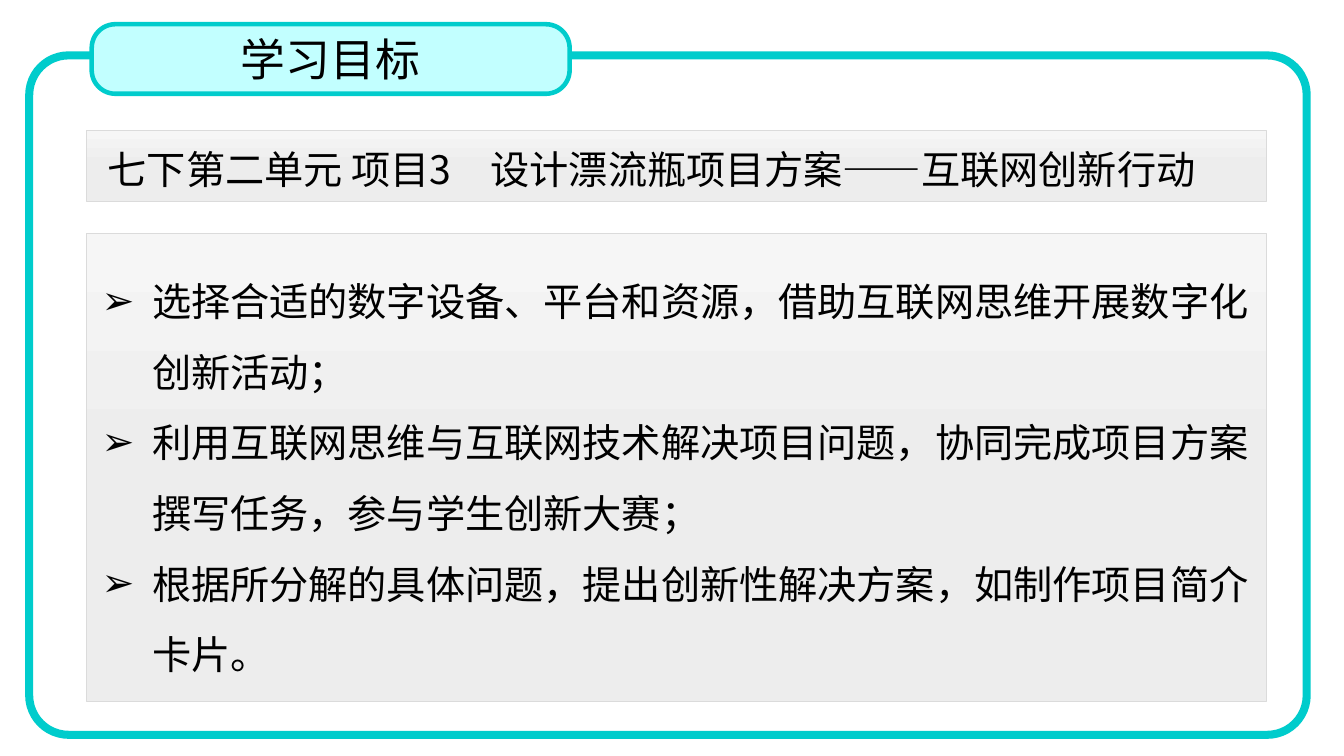
from copy import deepcopy

from pptx import Presentation
from pptx.dml.color import RGBColor
from pptx.enum.shapes import MSO_SHAPE as Shape
from pptx.enum.text import MSO_ANCHOR as Anchor, MSO_AUTO_SIZE as AutoSize, PP_ALIGN as Align
from pptx.oxml.ns import qn
from pptx.util import Inches, Pt
from lxml.etree import SubElement

COLORS = {
    "text": "000000",
    "frame": "00CCCC",
    "tab": "C2FFFF",
    "panel_line": "DBDBDB",
    "panel_top": "F6F6F6",
    "panel_middle": "EDEDED",
    "panel_bottom": "EBEBEB",
}

GOALS = [
    "选择合适的数字设备、平台和资源，借助互联网思维开展数字化创新活动；",
    "利用互联网思维与互联网技术解决项目问题，协同完成项目方案撰写任务，参与学生创新大赛；",
    "根据所分解的具体问题，提出创新性解决方案，如制作项目简介卡片。",
]


class GoalSlide:
    title_font = "Arial"
    body_font = "Noto Sans CJK SC"
    title_size = Pt(32)
    body_size = Pt(28)
    line_spacing = 1.5

    def __init__(self, slide):
        self.slide = slide

    @staticmethod
    def color(name):
        return RGBColor.from_string(COLORS[name])

    def outlined(self, kind, box, line, width):
        shape = self.slide.shapes.add_shape(kind, *map(Inches, box))
        shape.shadow.inherit = False
        shape.line.color.rgb = self.color(line)
        shape.line.width = Pt(width)
        return shape

    def panel(self, *box):
        """Grey rectangle shaded from top to bottom in three stops."""
        fill = self.outlined(Shape.RECTANGLE, box, "panel_line", 0.5).fill
        fill.gradient()
        fill.gradient_angle = 270
        first = fill.gradient_stops[0]._gs
        first.addnext(deepcopy(first))
        shades = ("panel_top", "panel_middle", "panel_bottom")
        for stop, shade, position in zip(fill.gradient_stops, shades, (0, 0.5, 1)):
            stop.color.rgb = self.color(shade)
            stop.position = position

    def rounded(self, *box, radius, width, fill=None):
        shape = self.outlined(Shape.ROUNDED_RECTANGLE, box, "frame", width)
        shape.adjustments[0] = radius
        if fill:
            shape.fill.solid()
            shape.fill.fore_color.rgb = self.color(fill)
        else:
            shape.fill.background()
        return shape

    def style(self, paragraph, font_name, size):
        for run in paragraph.runs:
            run.font.name = font_name
            run.font.size = size
            run.font.color.rgb = self.color("text")
            SubElement(run.font._element, qn("a:ea"), typeface=font_name)

    def title_tab(self, title, *box):
        tab = self.rounded(*box, radius=0.341, width=3.25, fill="tab")
        frame = tab.text_frame
        frame.text = title
        frame.vertical_anchor = Anchor.MIDDLE
        heading = frame.paragraphs[0]
        heading.alignment = Align.CENTER
        self.style(heading, self.title_font, self.title_size)

    def body(self, lines, *box, bullet=None):
        frame = self.slide.shapes.add_textbox(*map(Inches, box)).text_frame
        frame.word_wrap = True
        frame.auto_size = AutoSize.SHAPE_TO_FIT_TEXT
        frame.text = "\n".join(lines)
        for paragraph in frame.paragraphs:
            paragraph.line_spacing = self.line_spacing
            if bullet:
                self.add_bullet(paragraph, bullet)
            self.style(paragraph, self.body_font, self.body_size)

    @staticmethod
    def add_bullet(paragraph, bullet):
        properties = paragraph._p.get_or_add_pPr()
        properties.set("marL", str(Inches(0.5)))
        properties.set("indent", str(-Inches(0.5)))
        SubElement(properties, qn("a:buFont"), typeface="Arial")
        SubElement(properties, qn("a:buChar"), char=bullet)


def main():
    deck = Presentation()
    deck.slide_width, deck.slide_height = Inches(13.33), Inches(7.5)
    page = GoalSlide(deck.slides.add_slide(deck.slide_layouts[6]))

    page.panel(0.86, 2.32, 11.7, 4.64)
    page.panel(0.86, 1.29, 11.7, 0.71)
    page.rounded(0.29, 0.55, 12.67, 6.74, radius=0.058, width=5.75)
    page.title_tab("学习目标", 0.91, 0.24, 4.74, 0.69)
    page.body(["七下第二单元 项目3　设计漂流瓶项目方案——互联网创新行动"], 0.97, 1.16, 11.59, 0.81)
    page.body(GOALS, 0.91, 2.47, 11.59, 4.4, bullet="➢")

    deck.save("out.pptx")


if __name__ == "__main__":
    main()
